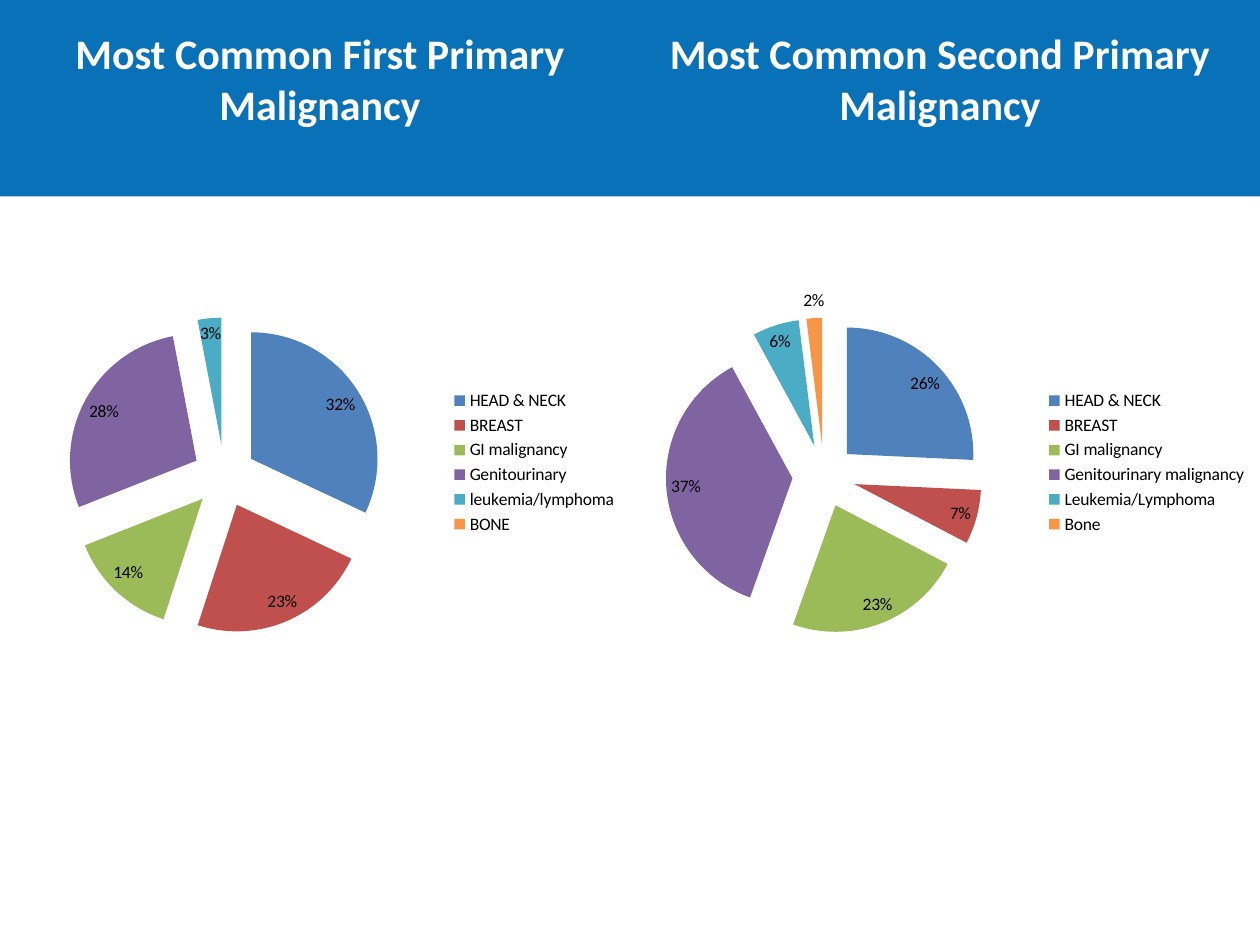
from lxml import etree
from pptx import Presentation
from pptx.chart.data import CategoryChartData
from pptx.dml.color import RGBColor
from pptx.enum.chart import XL_CHART_TYPE, XL_LABEL_POSITION, XL_LEGEND_POSITION
from pptx.enum.shapes import MSO_SHAPE
from pptx.enum.text import PP_ALIGN
from pptx.oxml.ns import qn
from pptx.util import Inches, Pt

PIE = XL_CHART_TYPE.PIE
RIGHT = XL_LEGEND_POSITION.RIGHT
BEST = XL_LABEL_POSITION.BEST_FIT
RECT = MSO_SHAPE.RECTANGLE
CENTER = PP_ALIGN.CENTER

BLUE = RGBColor(0x09, 0x71, 0xB8)
WHITE = RGBColor(0xFF, 0xFF, 0xFF)
BLACK = RGBColor(0x00, 0x00, 0x00)
HUES = [
    RGBColor(0x4F, 0x81, 0xBD),
    RGBColor(0xC0, 0x50, 0x4D),
    RGBColor(0x9B, 0xBB, 0x59),
    RGBColor(0x80, 0x64, 0xA2),
    RGBColor(0x4B, 0xAC, 0xC6),
    RGBColor(0xF7, 0x96, 0x46),
]
FONT = "Calibri"
WIDE, HIGH = 10, 7.5
HALF = WIDE / 2
LAP = 0.08

FIRST = [("HEAD & NECK", 32), ("BREAST", 23), ("GI malignancy", 14),
         ("Genitourinary", 28), ("leukemia/lymphoma", 3), ("BONE", 0)]
SECOND = [("HEAD & NECK", 26), ("BREAST", 7), ("GI malignancy", 23),
          ("Genitourinary malignancy", 37), ("Leukemia/Lymphoma", 6), ("Bone", 2)]


def inch(box):
    return [Inches(n) for n in box]


def style(font, size, color, bold=False):
    font.name = FONT
    font.size = Pt(size)
    font.bold = bold
    font.color.rgb = color


def write(slide, box, text, size=24, color=WHITE, bold=True, align=CENTER):
    frame = slide.shapes.add_textbox(*inch(box)).text_frame
    frame.word_wrap = True
    para = frame.paragraphs[0]
    para.alignment = align
    run = para.add_run()
    run.text = text
    style(run.font, size, color, bold)


def banner(slide, box):
    band = slide.shapes.add_shape(RECT, *inch(box))
    band.shadow.inherit = False
    band.fill.solid()
    band.fill.fore_color.rgb = BLUE
    band.line.fill.background()


def pie(slide, box, rows, gap=25):
    data = CategoryChartData()
    data.categories = [name for name, _ in rows]
    data.add_series("Series 1", [value for _, value in rows])
    chart = slide.shapes.add_chart(PIE, *inch(box), data).chart
    style(chart.font, 10, BLACK)
    chart.has_title = False
    chart.has_legend = True
    chart.legend.position = RIGHT
    chart.legend.include_in_layout = False

    plot = chart.plots[0]
    plot.vary_by_categories = True
    plot.has_data_labels = True
    labels = plot.data_labels
    labels.show_percentage = True
    labels.show_value = False
    labels.number_format = "0%"
    labels.number_format_is_linked = False
    labels.position = BEST
    style(labels.font, 10, BLACK)

    series = plot.series[0]
    for spot, hue in enumerate(HUES):
        fill = series.points[spot].format.fill
        fill.solid()
        fill.fore_color.rgb = hue
    burst = etree.Element(qn("c:explosion"), val=str(gap))
    series._element.find(qn("c:dPt")).addprevious(burst)


def panel(slide, box, lead, title, rows):
    left, top, width, height = box
    write(slide, (lead, top + 0.17, width + LAP, 0.91), title)
    pie(slide, (left, top + 2.17, width, height * 0.4), rows)


def main():
    deck = Presentation()
    deck.slide_width, deck.slide_height = inch((WIDE, HIGH))
    slide = deck.slides.add_slide(deck.slide_layouts[6])
    banner(slide, (0, 0, WIDE, 1.56))
    panel(slide, (0, 0, HALF, HIGH), 0,
          "Most Common First Primary Malignancy", FIRST)
    panel(slide, (HALF, 0, HALF, HIGH), HALF - LAP,
          "Most Common Second Primary Malignancy", SECOND)
    deck.save("out.pptx")


if __name__ == "__main__":
    main()
